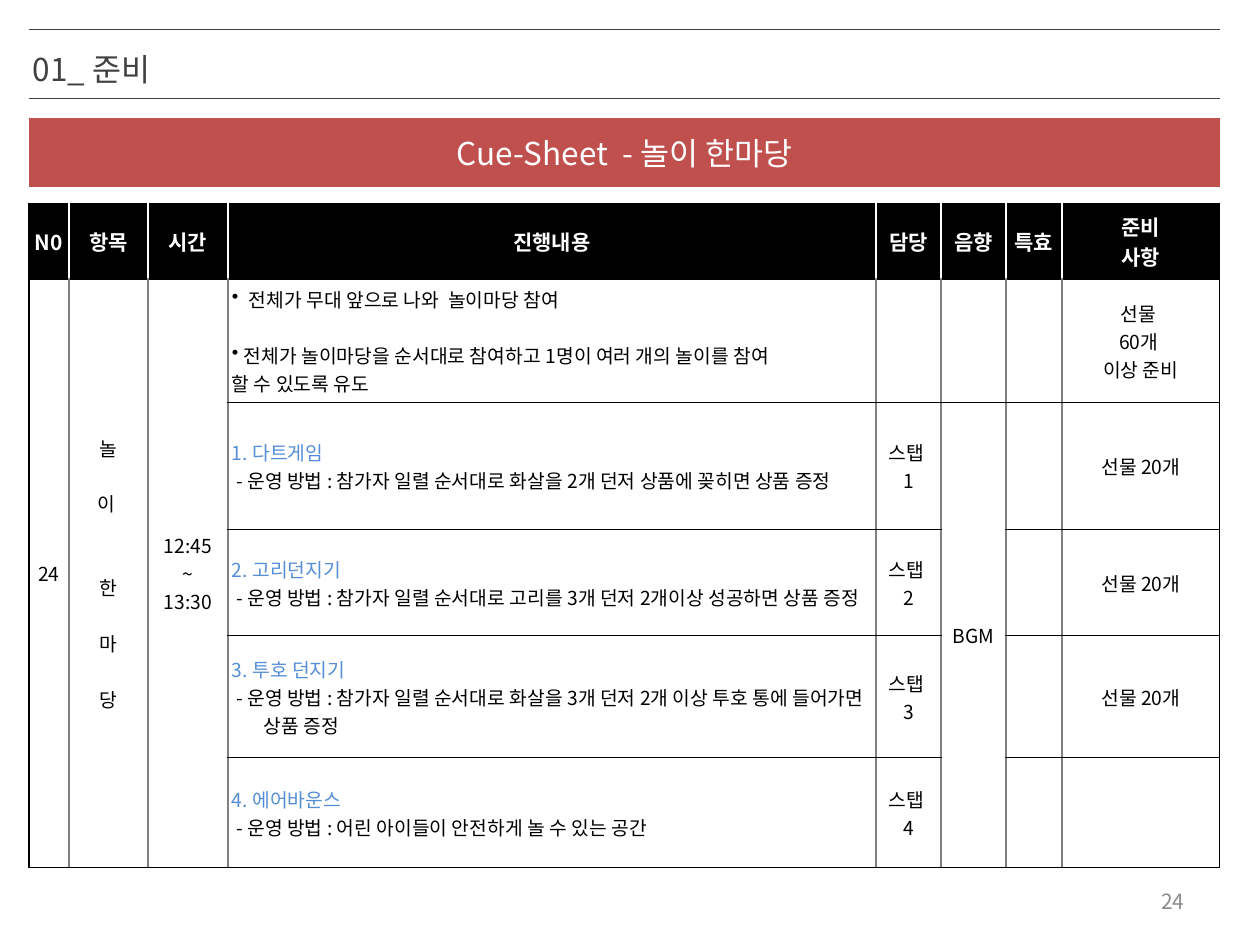
from lxml.etree import SubElement
from pptx import Presentation
from pptx.dml.color import RGBColor
from pptx.enum.shapes import MSO_CONNECTOR as Connector, MSO_SHAPE as Preset
from pptx.enum.text import MSO_ANCHOR as Anchor, MSO_AUTO_SIZE as AutoSize, PP_ALIGN as Align
from pptx.oxml import parse_xml
from pptx.oxml.ns import nsdecls, qn
from pptx.util import Emu, Pt

COLORS = {"ink": "000000", "paper": "FFFFFF", "heading": "404040", "banner": "C0504D",
          "game": "558ED5", "grid": "808080", "number": "8C8C8C"}
FONT = "Noto Sans CJK KR"
LEFT, WIDTH = 29, 1191


def px(length):
    return Emu(round(length * 914400 / 126))


def rgb(name):
    return RGBColor.from_string(COLORS[name])


def write(paragraph, text, size=11, color="ink", bold=False, align=Align.CENTER,
          before=0, spacing=None, margin=0, indent=0, bullet=None):
    paragraph.alignment = align
    paragraph.space_before = Pt(before)
    if spacing:
        paragraph.line_spacing = spacing
    properties = paragraph._p.get_or_add_pPr()
    properties.set("marL", str(px(margin)))
    properties.set("indent", str(px(indent)))
    if bullet:
        SubElement(properties, qn("a:buChar")).set("char", bullet)
    run = paragraph.add_run()
    run.text = text
    run.font.size, run.font.bold = Pt(size), bold
    run.font.color.rgb = rgb(color)
    run.font.name = FONT
    SubElement(run._r.get_or_add_rPr(), qn("a:ea")).set("typeface", FONT)


class CueSheet:
    """Holds the style and the current slide of a cue sheet."""

    def __init__(self, presentation):
        self.slide = presentation.slides.add_slide(presentation.slide_layouts[5])
        self.shapes = self.slide.shapes

    def title(self, text, left, top, width, height):
        heading = self.shapes.title
        heading.left, heading.top, heading.width, heading.height = map(px, (left, top, width, height))
        frame = heading.text_frame
        frame.word_wrap, frame.auto_size = True, AutoSize.SHAPE_TO_FIT_TEXT
        frame.vertical_anchor = Anchor.TOP
        write(frame.paragraphs[0], text, size=18, color="heading", align=Align.LEFT, spacing=0.85)

    def rule(self, top):
        line = self.shapes.add_connector(
            Connector.STRAIGHT, px(LEFT), px(top), px(LEFT + WIDTH), px(top))
        line.line.color.rgb, line.line.width = rgb("heading"), Pt(0.25)
        SubElement(line._element.spPr, qn("a:effectLst"))

    def banner(self, text, top, height):
        band = self.shapes.add_shape(Preset.RECTANGLE, px(LEFT), px(top), px(WIDTH), px(height))
        band.shadow.inherit = False
        band.fill.solid()
        band.fill.fore_color.rgb = rgb("banner")
        band.line.fill.background()
        band.text_frame.vertical_anchor = Anchor.MIDDLE
        write(band.text_frame.paragraphs[0], text, size=18, color="paper")

    def page_number(self, text, left, top, width, height):
        frame = self.shapes.add_textbox(*map(px, (left, top, width, height))).text_frame
        frame.word_wrap, frame.vertical_anchor = True, Anchor.MIDDLE
        write(frame.paragraphs[0], text, size=12, color="number", align=Align.RIGHT)

    def table(self, top, widths, heights, contents, merges):
        frame = self.shapes.add_table(len(heights), len(widths), px(LEFT), px(top),
                                      px(sum(widths)), px(sum(heights)))
        table = frame.table
        table.first_row = table.horz_banding = False
        for column, width in zip(table.columns, widths):
            column.width = px(width)
        for row, height in zip(table.rows, heights):
            row.height = px(height)
        for first, last, column in merges:
            table.cell(first, column).merge(table.cell(last, column))
        for row in range(len(heights)):
            for column in range(len(widths)):
                cell = table.cell(row, column)
                self.cell(cell, contents.get((row, column), []), header=row == 0)
                self.borders(cell, row, column, len(heights) - 1, len(widths) - 1)

    def cell(self, cell, lines, header):
        cell.fill.solid()
        cell.fill.fore_color.rgb = rgb("ink" if header else "paper")
        cell.vertical_anchor = Anchor.MIDDLE
        cell.margin_left = cell.margin_right = px(4)
        cell.margin_top = cell.margin_bottom = px(6)
        base = dict(size=12, color="paper", bold=True) if header else {}
        frame = cell.text_frame
        for order, (text, style) in enumerate(lines):
            paragraph = frame.add_paragraph() if order else frame.paragraphs[0]
            write(paragraph, text, **base, **style)

    def borders(self, cell, row, column, last_row, last_column):
        edges = {}
        if row or column == 0:
            edges["lnL"] = ("grid", 1) if column else ("ink", 0.75)
        if row or column == last_column:
            edges["lnR"] = ("grid", 1) if column < last_column else ("ink", 0.75)
        if not cell.is_spanned:
            edges["lnT"] = ("ink", 0.75)
        if not cell.is_spanned or row == last_row:
            edges["lnB"] = ("ink", 0.75)
        properties = cell._tc.get_or_add_tcPr()
        for order, (edge, (color, width)) in enumerate(edges.items()):
            properties.insert(order, parse_xml(
                f'<a:{edge} {nsdecls("a")} w="{Pt(width)}"><a:solidFill>'
                f'<a:srgbClr val="{COLORS[color]}"/></a:solidFill></a:{edge}>'))


def centred(*texts):
    return [(text, {}) for text in texts]


def main():
    presentation = Presentation()
    presentation.slide_width, presentation.slide_height = px(1260), px(945)
    sheet = CueSheet(presentation)
    sheet.banner("Cue-Sheet  - 놀이 한마당", 118, 69)
    sheet.rule(98)
    sheet.title("01_ 준비", 20, 49, 903, 45)
    sheet.rule(29)

    headings = ["N0", "항목", "시간", "진행내용", "담당", "음향", "특효"]
    contents = {(0, column): centred(text) for column, text in enumerate(headings)}
    contents[0, 7] = centred("준비", "사항")
    contents[1, 0] = centred("24")
    syllables = [("놀", 0), ("이 ", 16), ("한", 32), ("마", 16), ("당", 16)]
    contents[1, 1] = [(text, dict(before=gap)) for text, gap in syllables]
    contents[1, 2] = centred("12:45", "~", "13:30")
    contents[1, 3] = [
        ("전체가 무대 앞으로 나와  놀이마당 참여",
         dict(align=Align.LEFT, bullet="•", margin=17, indent=-17)),
        ("전체가 놀이마당을 순서대로 참여하고 1명이 여러 개의 놀이를 참여",
         dict(align=Align.LEFT, bullet="•", margin=12, indent=-12, before=16)),
        ("할 수 있도록 유도", dict(align=Align.LEFT)),
    ]
    contents[1, 7] = centred("선물 ", "60개 ", "이상 준비")
    contents[2, 5] = centred("BGM")

    games = [
        ("다트게임", "참가자 일렬 순서대로 화살을 2개 던저 상품에 꽂히면 상품 증정", "선물 20개"),
        ("고리던지기", "참가자 일렬 순서대로 고리를 3개 던저 2개이상 성공하면 상품 증정", "선물 20개"),
        ("투호 던지기", "참가자 일렬 순서대로 화살을 3개 던저 2개 이상 투호 통에 들어가면 상품 증정", "선물 20개"),
        ("에어바운스", "어린 아이들이 안전하게 놀 수 있는 공간", None),
    ]
    hanging = dict(align=Align.LEFT, margin=32, indent=-32)
    for number, (game, method, prize) in enumerate(games, 1):
        row = number + 1
        contents[row, 3] = [(f"{number}. {game}", dict(hanging, color="game")),
                            (f" - 운영 방법 : {method}", hanging)]
        contents[row, 4] = centred("스탭 ", str(number))
        if prize:
            contents[row, 7] = centred(prize)

    sheet.table(204, [40, 79, 80, 648, 65, 65, 56, 158], [75, 124, 127, 106, 122, 110],
                contents, merges=[(1, 5, 0), (1, 5, 1), (1, 5, 2), (2, 5, 5)])
    sheet.page_number("24", 903, 876, 294, 50)
    presentation.save("out.pptx")


if __name__ == "__main__":
    main()
